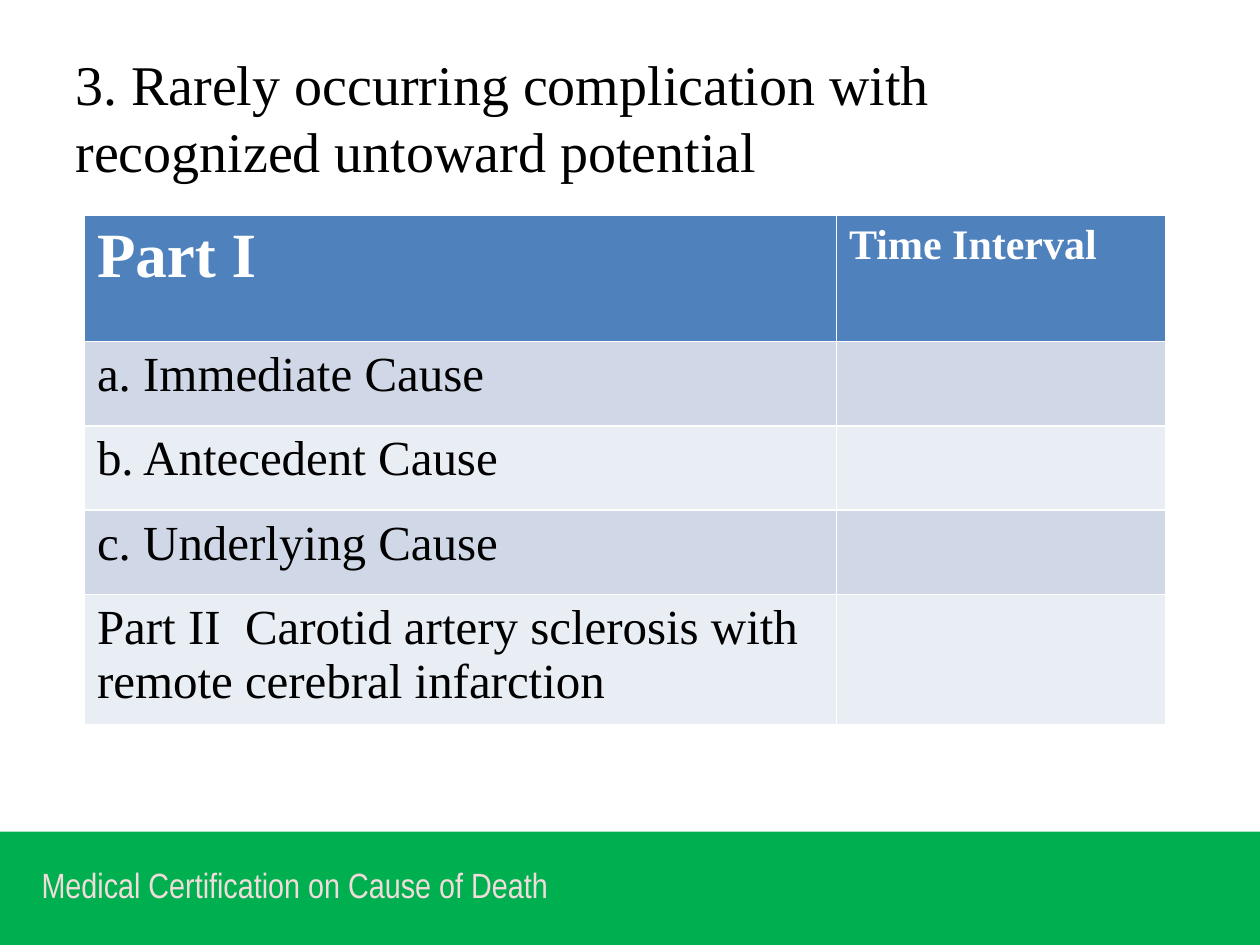
from pptx import Presentation
from pptx.dml.color import RGBColor
from pptx.enum.shapes import MSO_SHAPE
from pptx.enum.text import MSO_ANCHOR
from pptx.util import Inches, Pt

RECTANGLE = MSO_SHAPE.RECTANGLE
MIDDLE = MSO_ANCHOR.MIDDLE

COLORS = {
    "green": "00B050",
    "footer": "F2DCDB",
    "black": "000000",
    "white": "FFFFFF",
    "header": "4F81BD",
    "odd_row": "D0D8E8",
    "even_row": "E9EDF4",
}
SERIF = "Times New Roman"
TITLE = "3. Rarely occurring complication with recognized untoward potential"
FOOTER = "Medical Certification on Cause of Death"
HEADERS = [("Part I", 36), ("Time Interval", 24)]
CAUSES = [
    "a. Immediate Cause",
    "b. Antecedent Cause",
    "c. Underlying Cause",
    "Part II  Carotid artery sclerosis with remote cerebral infarction",
]
COLUMN_WIDTHS = [5.97, 2.61]
ROW_HEIGHTS = [1, 0.67, 0.67, 0.67, 1.02]


def color(name):
    return RGBColor.from_string(COLORS[name])


def write(text_frame, text, size, color_name, font_name=SERIF, bold=False):
    paragraph = text_frame.paragraphs[0]
    paragraph.text = text
    font = paragraph.font
    font.name, font.size, font.bold = font_name, Pt(size), bold
    font.color.rgb = color(color_name)


def add_text_box(slide, box):
    text_frame = slide.shapes.add_textbox(*map(Inches, box)).text_frame
    text_frame.word_wrap = True
    return text_frame


def add_footer(slide):
    band = slide.shapes.add_shape(RECTANGLE, 0, Inches(6.6), Inches(10), Inches(0.92))
    band.shadow.inherit = False
    band.fill.solid()
    band.fill.fore_color.rgb = color("green")
    band.line.fill.background()
    text_frame = add_text_box(slide, (0.33, 6.85, 5.17, 0.47))
    text_frame.margin_left = text_frame.margin_right = 0
    text_frame.margin_top = text_frame.margin_bottom = 0
    write(text_frame, FOOTER, 20, "footer", "Arial Narrow")


def add_cause_table(slide):
    table = slide.shapes.add_table(
        len(ROW_HEIGHTS), len(COLUMN_WIDTHS), Inches(0.67), Inches(1.71),
        Inches(sum(COLUMN_WIDTHS)), Inches(sum(ROW_HEIGHTS)),
    ).table
    for column, width in zip(table.columns, COLUMN_WIDTHS):
        column.width = Inches(width)
    for index, (row, height) in enumerate(zip(table.rows, ROW_HEIGHTS)):
        row.height = Inches(height)
        fill_name = "header" if index == 0 else "odd_row" if index % 2 else "even_row"
        for cell in row.cells:
            cell.fill.solid()
            cell.fill.fore_color.rgb = color(fill_name)
    for index, (text, size) in enumerate(HEADERS):
        write(table.cell(0, index).text_frame, text, size, "white", bold=True)
    for index, text in enumerate(CAUSES, start=1):
        write(table.cell(index, 0).text_frame, text, 28, "black")


def main():
    presentation = Presentation()
    presentation.slide_width = Inches(10)
    presentation.slide_height = Inches(7.5)
    slide = presentation.slides.add_slide(presentation.slide_layouts[6])
    add_footer(slide)
    title = add_text_box(slide, (0.5, 0.3, 9, 1.25))
    title.vertical_anchor = MIDDLE
    write(title, TITLE, 32, "black")
    add_cause_table(slide)
    presentation.save("out.pptx")


if __name__ == "__main__":
    main()
